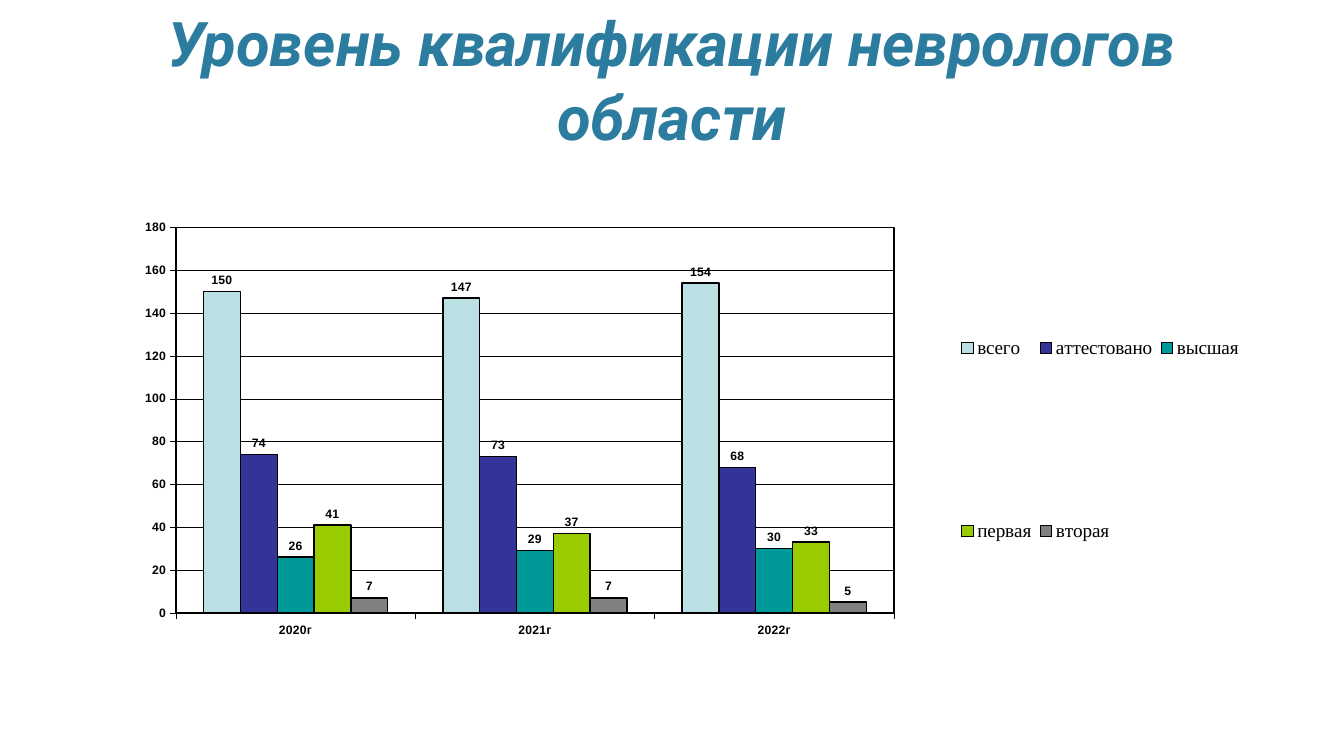
from dataclasses import dataclass

from lxml.etree import SubElement
from pptx import Presentation
from pptx.chart.data import CategoryChartData as Data
from pptx.dml.color import RGBColor
from pptx.enum.chart import XL_CHART_TYPE as Kind
from pptx.enum.chart import XL_LABEL_POSITION as Spot
from pptx.enum.chart import XL_LEGEND_POSITION as Side
from pptx.enum.chart import XL_TICK_MARK as Tick
from pptx.enum.text import MSO_ANCHOR as Anchor
from pptx.enum.text import MSO_AUTO_SIZE as Fit
from pptx.enum.text import PP_ALIGN as Align
from pptx.oxml import parse_xml
from pptx.oxml.ns import nsdecls, qn
from pptx.util import Inches, Pt

BLACK = "000000"


@dataclass
class Group:
    name: str
    counts: tuple[int, ...]
    color: str


YEARS = ("2020г", "2021г", "2022г")
GROUPS = (
    Group("всего", (150, 147, 154), "BBE0E3"),
    Group("аттестовано", (74, 73, 68), "333399"),
    Group("высшая", (26, 29, 30), "009999"),
    Group("первая", (41, 37, 33), "99CC00"),
    Group("вторая", (7, 7, 5), "808080"),
)


def paint(target, color: str) -> None:
    if hasattr(target, "solid"):
        target.solid()
        target = target.fore_color
    target.rgb = RGBColor.from_string(color)


def style(font, face: str, size: float, color: str, bold: bool = False) -> None:
    font.name, font.size, font.bold = face, Pt(size), bold
    paint(font.color, color)


def rule(line, width: float) -> None:
    paint(line.fill, BLACK)
    line.width = Pt(width)


def place(part, index: int, box: tuple[float, ...], inner: bool = False) -> None:
    for old in part.findall(qn("c:layout")):
        part.remove(old)
    layout = parse_xml(f"<c:layout {nsdecls('c')}/>")
    manual = SubElement(layout, qn("c:manualLayout"))
    if inner:
        SubElement(manual, qn("c:layoutTarget")).set("val", "inner")
    for key in ("xMode", "yMode"):
        SubElement(manual, qn(f"c:{key}")).set("val", "edge")
    for key, value in zip("xywh", box):
        SubElement(manual, qn(f"c:{key}")).set("val", str(value))
    part.insert(index, layout)


def add_title(slide) -> None:
    title = slide.shapes.title
    title.left, title.top = Inches(0.8), Inches(0.12)
    title.width, title.height = Inches(11.73), Inches(1.46)
    frame = title.text_frame
    frame.text = "Уровень квалификации неврологов области"
    frame.word_wrap, frame.auto_size = True, Fit.NONE
    frame.vertical_anchor = Anchor.BOTTOM
    frame.margin_left = frame.margin_right = Inches(0.13)
    frame.margin_top = frame.margin_bottom = Inches(0.06)
    para = frame.paragraphs[0]
    para.alignment = Align.CENTER
    style(para.font, "Roboto", 44, "2C7C9F", True)
    para.font.italic = True


def add_bars(slide) -> None:
    data = Data()
    data.categories = YEARS
    for group in GROUPS:
        data.add_series(group.name, group.counts)
    chart = slide.shapes.add_chart(
        Kind.COLUMN_CLUSTERED, Inches(0.98), Inches(1.67),
        Inches(11.43), Inches(5.48), data).chart
    chart.has_title = False
    style(chart.font, "Arial", 8.7, BLACK, True)

    plot = chart.plots[0]
    plot.gap_width, plot.overlap, plot.vary_by_categories = 150, 0, False
    for series, group in zip(plot.series, GROUPS):
        paint(series.format.fill, group.color)
        rule(series.format.line, 1)
        labels = series.data_labels
        labels.show_value, labels.position = True, Spot.OUTSIDE_END
        style(labels.font, "Arial", 8.7, BLACK, True)

    for axis in (chart.category_axis, chart.value_axis):
        axis.major_tick_mark, axis.minor_tick_mark = Tick.OUTSIDE, Tick.NONE
        style(axis.tick_labels.font, "Arial", 8.7, BLACK, True)
        rule(axis.format.line, 0.25)
    scale = chart.value_axis
    scale.minimum_scale, scale.maximum_scale, scale.major_unit = 0, 180, 20
    scale.has_major_gridlines = True
    rule(scale.major_gridlines.format.line, 0.25)

    chart.has_legend = True
    legend = chart.legend
    legend.position, legend.include_in_layout = Side.RIGHT, False
    style(legend.font, "Times New Roman", 13.7, BLACK)

    root = chart.element
    area = root.find(f".//{qn('c:plotArea')}")
    place(area, 0, (0.067, 0.107, 0.623, 0.698), True)
    place(root.find(f".//{qn('c:legend')}"), 1, (0.741, 0.013, 0.256, 0.956))
    area.append(parse_xml(
        f'<c:spPr {nsdecls("c", "a")}><a:noFill/><a:ln w="{Pt(1)}"><a:solidFill>'
        f'<a:srgbClr val="{BLACK}"/></a:solidFill></a:ln></c:spPr>'))


def main() -> None:
    deck = Presentation()
    deck.slide_width, deck.slide_height = Inches(13.33), Inches(7.5)
    slide = deck.slides.add_slide(deck.slide_layouts[5])
    paint(slide.background.fill, "FFFFFF")
    add_title(slide)
    add_bars(slide)
    deck.save("out.pptx")


if __name__ == "__main__":
    main()
